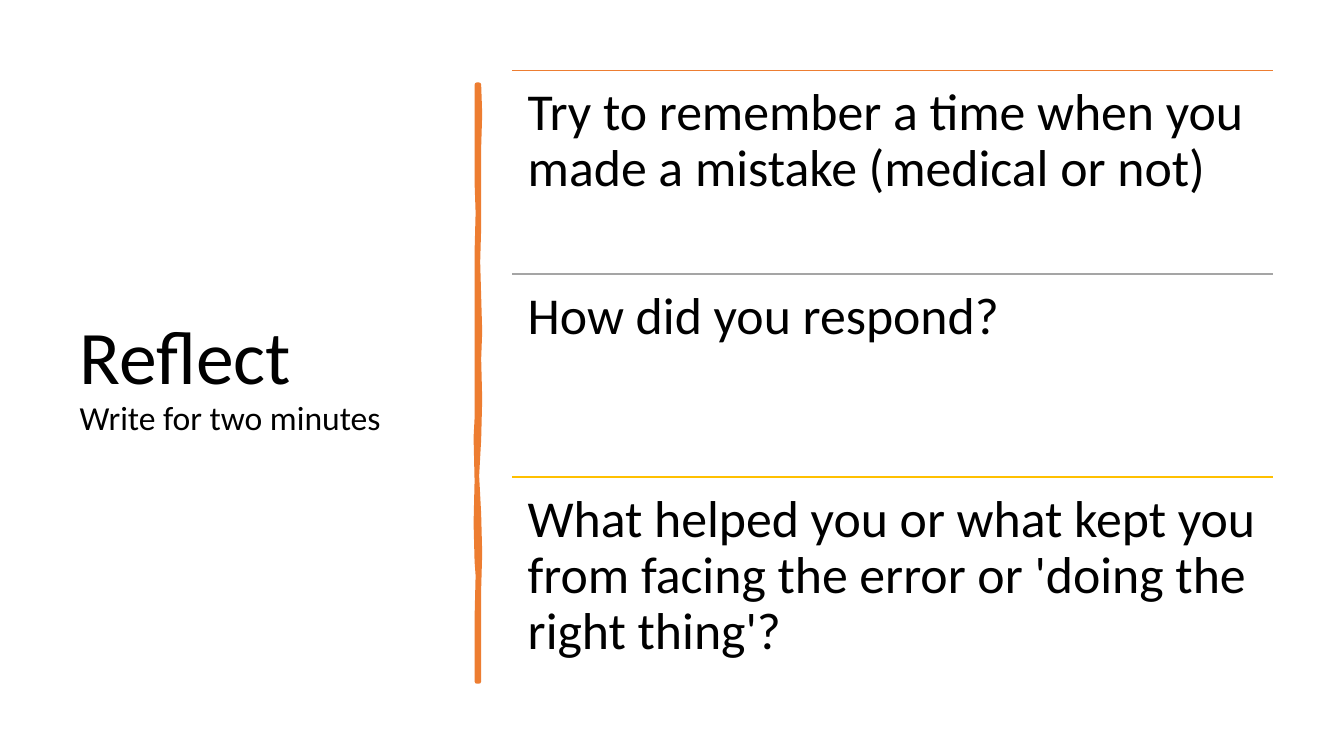
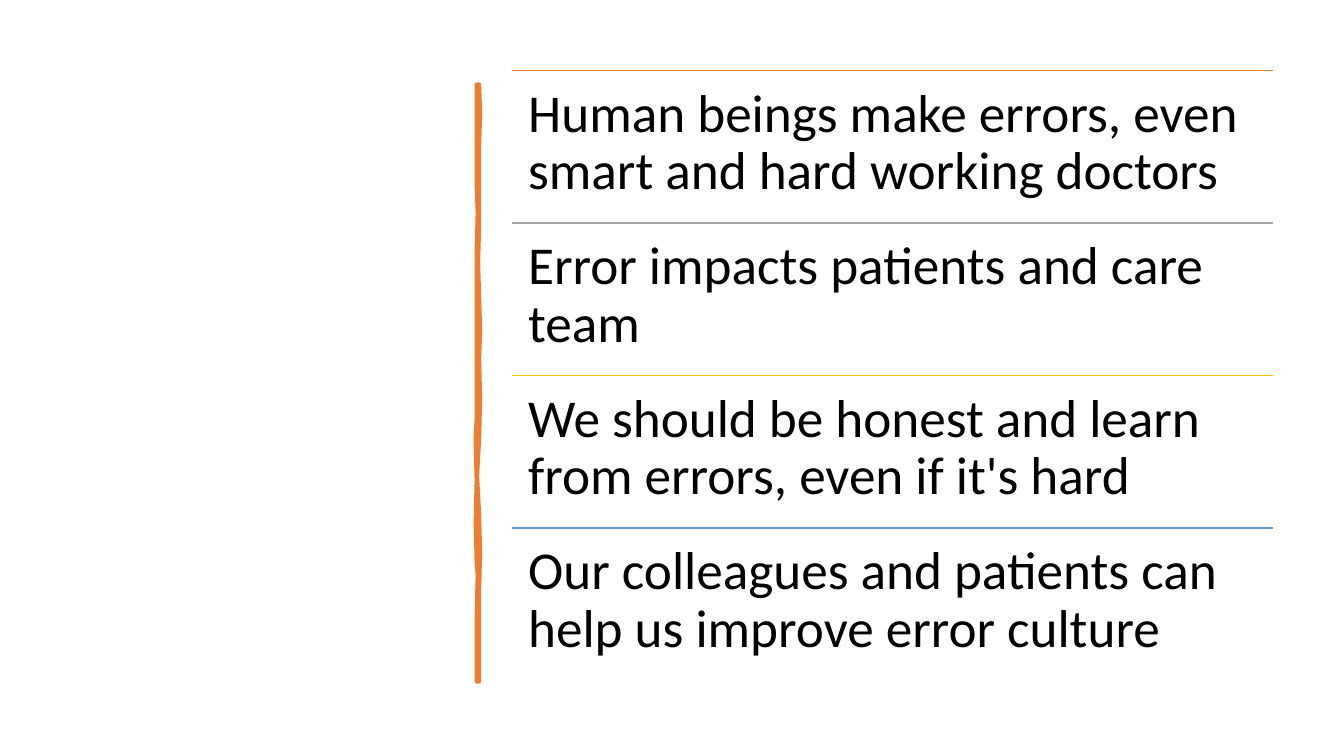
from dataclasses import dataclass

from lxml import etree
from pptx import Presentation
from pptx import util as u
from pptx.dml.color import RGBColor
from pptx.enum import shapes, text
from pptx.oxml import ns

PX = 9144


@dataclass(frozen=True)
class Theme:
    """Colours, font and type sizes shared by the slides."""
    font: str = "Calibri"
    ink: str = "000000"
    paper: str = "FFFFFF"
    accent: str = "ED7D31"
    rules: tuple = ("ED7D31", "A5A5A5", "FFC000", "5B9BD5")
    title: int = 54
    subtitle: int = 24
    bar_line: float = 3.25
    rule_line: int = 1
    leading: float = 0.9
    inset_ratio: float = 0.3


THEME = Theme()
TITLE_BOX = (69, 70, 374, 611)
BAR_BOX = (472, 84, 7, 592)
LIST_BOX = (508, 70, 755, 605)

BAR_OUTLINE = [
    (3, 0), (4, 29), (3, 62), (3, 102), (3, 142), (2, 176), (3, 210),
    (4, 245), (3, 272), (4, 312), (3, 352), (1, 388), (3, 426), (4, 465),
    (3, 500), (3, 540), (3, 592), (1, 592), (1, 560), (1, 529), (2, 487),
    (1, 473), (0, 435), (1, 393), (0, 350), (1, 331), (1, 293), (1, 251),
    (1, 206), (1, 166), (2, 127), (1, 97), (1, 49), (1, 0),
]


def px(*values):
    """Turn pixel lengths into EMU."""
    return [u.Emu(round(v * PX)) for v in values]


def rgb(code):
    """Return the colour for a hex code."""
    return RGBColor.from_string(code)


def set_font(font, size):
    """Apply the theme font and ink at the given size."""
    font.name, font.size = THEME.font, u.Pt(size)
    font.color.rgb = rgb(THEME.ink)


def add_title(slide, box, heading, prompt):
    """Place the heading with a smaller prompt on the line below."""
    sp = slide.shapes.title
    sp.left, sp.top, sp.width, sp.height = px(*box)
    tf = sp.text_frame
    tf.word_wrap = True
    tf.vertical_anchor = text.MSO_ANCHOR.MIDDLE
    p = tf.paragraphs[0]
    p.alignment = text.PP_ALIGN.LEFT
    p.line_spacing = THEME.leading
    r = p.add_run()
    r.text = heading
    set_font(r.font, THEME.title)
    p.add_line_break()
    r = p.add_run()
    r.text = prompt
    set_font(r.font, THEME.subtitle)


def add_bar(slide, box):
    """Draw the hand-drawn vertical bar."""
    left, top, _, _ = box
    points = [(left + x, top + y) for x, y in BAR_OUTLINE]
    builder = slide.shapes.build_freeform(*points[0], scale=PX)
    builder.add_line_segments(points[1:], close=True)
    sp = builder.convert_to_shape()
    sp.shadow.inherit = False
    sp.fill.solid()
    sp.fill.fore_color.rgb = rgb(THEME.accent)
    sp.line.color.rgb = rgb(THEME.accent)
    sp.line.width = u.Pt(THEME.bar_line)


def add_row(slide, box, statement, color, size):
    """Draw one statement under its coloured rule."""
    left, top, width, _ = box
    rule = slide.shapes.add_connector(shapes.MSO_CONNECTOR.STRAIGHT,
                                      *px(left, top, left + width, top))
    rule.line.color.rgb = rgb(color)
    rule.line.width = u.Pt(THEME.rule_line)
    etree.SubElement(rule._element.spPr, ns.qn("a:effectLst"))
    tf = slide.shapes.add_textbox(*px(*box)).text_frame
    tf.word_wrap = True
    inset = u.Pt(size * THEME.inset_ratio)
    tf.margin_left = tf.margin_top = tf.margin_right = tf.margin_bottom = inset
    p = tf.paragraphs[0]
    p.text = statement
    p.line_spacing = THEME.leading
    set_font(p.font, size)


def add_list(slide, box, statements, size):
    """Divide the box into equal rows, one per statement."""
    left, top, width, height = box
    row = height / len(statements)
    for i, (statement, color) in enumerate(zip(statements, THEME.rules)):
        add_row(slide, (left, top + i * row, width, row), statement, color, size)


def add_slide(prs, statements, size, title=None):
    """Build a slide with a bar, a ruled list and an optional title."""
    slide = prs.slides.add_slide(prs.slide_layouts[5 if title else 6])
    slide.background.fill.solid()
    slide.background.fill.fore_color.rgb = rgb(THEME.paper)
    if title:
        add_title(slide, TITLE_BOX, *title)
    add_bar(slide, BAR_BOX)
    add_list(slide, LIST_BOX, statements, size)


def main():
    """Build and save the presentation."""
    prs = Presentation()
    prs.slide_width, prs.slide_height = u.Inches(13.33), u.Inches(7.5)
    add_slide(prs, [
        "Try to remember a time when you made a mistake (medical or not)",
        "How did you respond?",
        "What helped you or what kept you from facing the error or 'doing the right thing'?",
    ], size=37, title=("Reflect", "Write for two minutes"))
    add_slide(prs, [
        "Human beings make errors, even smart and hard working doctors",
        "Error impacts patients and care team",
        "We should be honest and learn from errors, even if it's hard",
        "Our colleagues and patients can help us improve error culture",
    ], size=38)
    prs.save("out.pptx")


if __name__ == "__main__":
    main()
